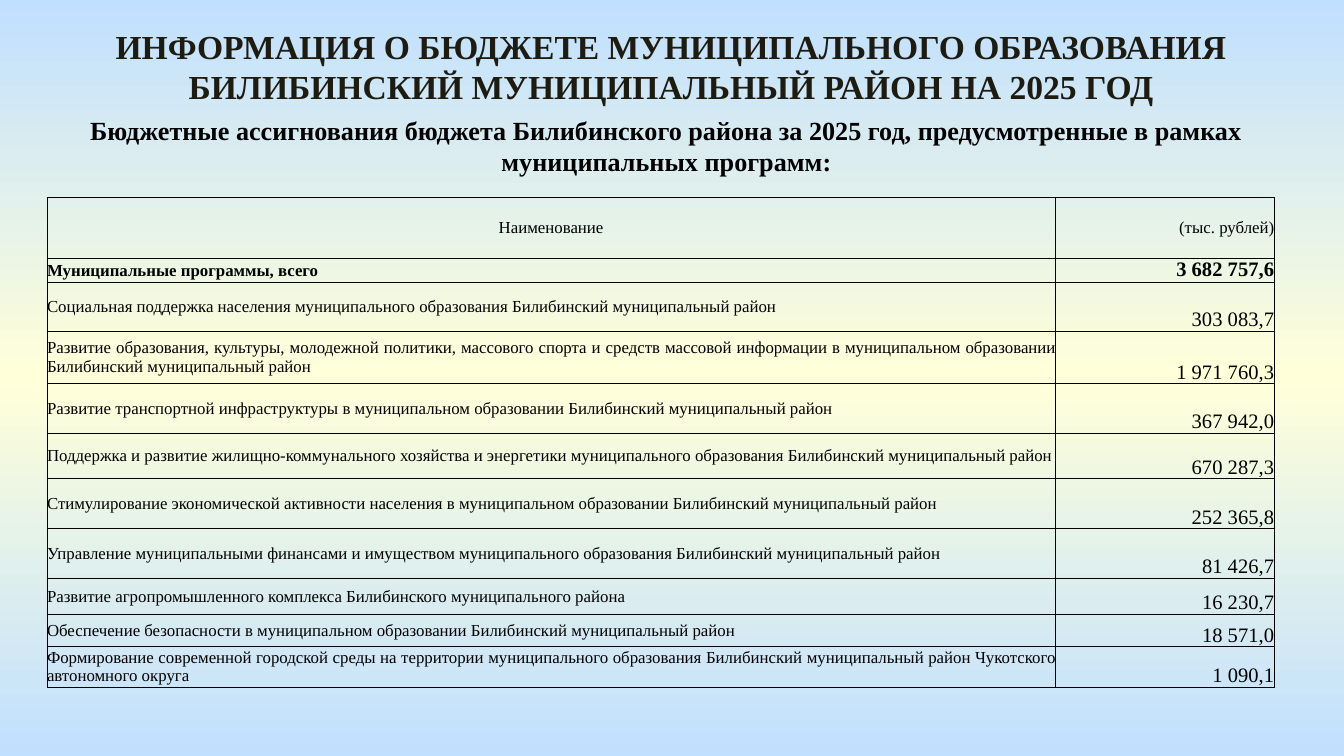
"""Build a slide with the district budget by municipal programme."""
from copy import deepcopy
from dataclasses import dataclass

from lxml.etree import SubElement
from pptx import Presentation
from pptx.dml.color import RGBColor
from pptx.enum.text import MSO_ANCHOR, PP_ALIGN
from pptx.oxml.ns import qn
from pptx.util import Inches, Pt


@dataclass(frozen=True)
class Theme:
    font: str = "Times New Roman"
    title_color: str = "1E1C11"
    text_color: str = "000000"
    edge_color: str = "C1E0FF"
    middle_color: str = "FFFFD9"
    title_size: float = 18
    subtitle_size: float = 14
    label_size: float = 9
    value_size: float = 11
    border_width: float = 0.5


THEME = Theme()
TITLE = "ИНФОРМАЦИЯ О БЮДЖЕТЕ МУНИЦИПАЛЬНОГО ОБРАЗОВАНИЯ БИЛИБИНСКИЙ МУНИЦИПАЛЬНЫЙ РАЙОН НА 2025 ГОД"
SUBTITLE = (
    "Бюджетные ассигнования бюджета Билибинского района за 2025 год, "
    "предусмотренные в рамках муниципальных программ:"
)
HEADER = ("Наименование", "(тыс. рублей)", 0.45)
TOTAL = ("Муниципальные программы, всего", "3 682 757,6", 0.18)
PROGRAMMES = [
    ("Социальная поддержка населения муниципального образования Билибинский муниципальный район",
     "303 083,7", 0.36),
    ("Развитие образования, культуры, молодежной политики, массового спорта и средств массовой "
     "информации в муниципальном образовании Билибинский муниципальный район", "1 971 760,3", 0.39),
    ("Развитие транспортной инфраструктуры в муниципальном образовании Билибинский муниципальный район",
     "367 942,0", 0.37),
    ("Поддержка и развитие жилищно-коммунального хозяйства и энергетики муниципального образования "
     "Билибинский муниципальный район", "670 287,3", 0.34),
    ("Стимулирование экономической активности населения в муниципальном образовании "
     "Билибинский муниципальный район ", "252 365,8", 0.37),
    ("Управление муниципальными финансами и имуществом муниципального образования "
     "Билибинский муниципальный район", "81 426,7", 0.37),
    ("Развитие агропромышленного комплекса Билибинского муниципального района", "16 230,7", 0.27),
    ("Обеспечение безопасности в муниципальном образовании Билибинский муниципальный район",
     "18 571,0", 0.24),
    ("Формирование современной городской среды на территории муниципального образования "
     "Билибинский муниципальный район Чукотского автономного округа", "1 090,1", 0.24),
]
COLUMN_WIDTHS = (7.5, 1.63)


def set_background(slide):
    fill = slide.background.fill
    fill.gradient()
    fill.gradient_angle = 90
    stop_list = slide.element.find(".//" + qn("a:gsLst"))
    stop_list.append(deepcopy(stop_list[0]))
    colors = (THEME.edge_color, THEME.middle_color, THEME.edge_color)
    for stop, position, color in zip(fill.gradient_stops, (0, 0.5, 1), colors):
        stop.position = position
        stop.color.rgb = RGBColor.from_string(color)


def write_text(text_frame, text, size, alignment, bold=False, color=THEME.text_color):
    text_frame.text = text
    paragraph = text_frame.paragraphs[0]
    paragraph.alignment = alignment
    font = paragraph.runs[0].font
    font.name = THEME.font
    font.size = Pt(size)
    font.bold = bold
    font.color.rgb = RGBColor.from_string(color)


def add_heading(slide, text, left, top, width, height, size, color):
    shape = slide.shapes.add_textbox(Inches(left), Inches(top), Inches(width), Inches(height))
    shape.text_frame.word_wrap = True
    write_text(shape.text_frame, text, size, PP_ALIGN.CENTER, True, color)


def set_borders(cell):
    properties = cell._tc.get_or_add_tcPr()
    for index, side in enumerate(("lnL", "lnR", "lnT", "lnB")):
        line = SubElement(properties, qn(f"a:{side}"), w=str(Pt(THEME.border_width)))
        solid_fill = SubElement(line, qn("a:solidFill"))
        SubElement(solid_fill, qn("a:srgbClr"), val=THEME.text_color)
        properties.insert(index, line)


def fill_cell(cell, text, size, alignment, anchor, bold=False):
    cell.margin_left = cell.margin_right = cell.margin_top = cell.margin_bottom = 0
    cell.vertical_anchor = anchor
    write_text(cell.text_frame, text, size, alignment, bold)
    cell.fill.background()
    set_borders(cell)


def fill_row(table, index, content, label_alignment, value_size, value_anchor, bold=False):
    label, value, height = content
    table.rows[index].height = Inches(height)
    fill_cell(table.cell(index, 0), label, THEME.label_size, label_alignment, MSO_ANCHOR.MIDDLE, bold)
    fill_cell(table.cell(index, 1), value, value_size, PP_ALIGN.RIGHT, value_anchor, bold)


def add_budget_table(slide, left, top):
    heights = [content[2] for content in (HEADER, TOTAL, *PROGRAMMES)]
    frame = slide.shapes.add_table(
        len(heights), len(COLUMN_WIDTHS), Inches(left), Inches(top),
        Inches(sum(COLUMN_WIDTHS)), Inches(sum(heights)),
    )
    table = frame.table
    table.first_row = table.horz_banding = False
    for column, width in zip(table.columns, COLUMN_WIDTHS):
        column.width = Inches(width)
    fill_row(table, 0, HEADER, PP_ALIGN.CENTER, THEME.label_size, MSO_ANCHOR.MIDDLE)
    fill_row(table, 1, TOTAL, PP_ALIGN.LEFT, THEME.value_size, MSO_ANCHOR.TOP, True)
    for index, programme in enumerate(PROGRAMMES, start=2):
        fill_row(table, index, programme, PP_ALIGN.JUSTIFY, THEME.value_size, MSO_ANCHOR.BOTTOM)


def main():
    presentation = Presentation()
    presentation.slide_width = Inches(10)
    presentation.slide_height = Inches(10) * 9 // 16
    slide = presentation.slides.add_slide(presentation.slide_layouts[6])
    set_background(slide)
    add_heading(slide, TITLE, 0.35, 0.14, 9.29, 0.71, THEME.title_size, THEME.title_color)
    add_heading(slide, SUBTITLE, 0.31, 0.8, 9.3, 0.57, THEME.subtitle_size, THEME.text_color)
    add_budget_table(slide, 0.35, 1.47)
    presentation.save("out.pptx")


if __name__ == "__main__":
    main()
